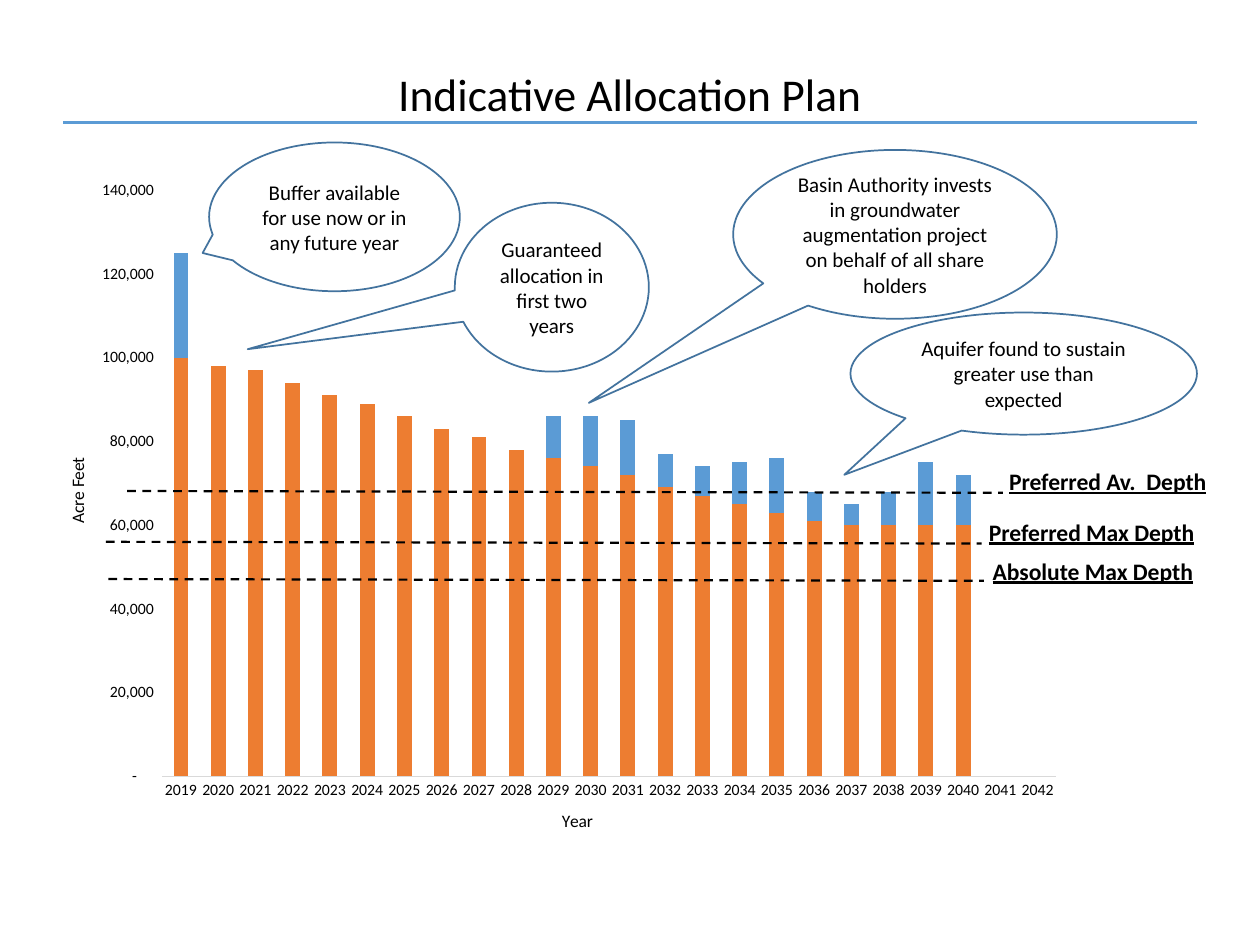
from pptx import Presentation
from pptx.chart.data import CategoryChartData
from pptx.dml.color import RGBColor
from pptx.enum.chart import XL_CHART_TYPE, XL_TICK_MARK
from pptx.enum.dml import MSO_LINE
from pptx.enum.shapes import MSO_CONNECTOR, MSO_SHAPE
from pptx.enum.text import MSO_ANCHOR, MSO_AUTO_SIZE, PP_ALIGN
from pptx.oxml import parse_xml
from pptx.oxml.ns import nsdecls, qn
from pptx.util import Pt

FONT = "Calibri"
BLACK, BLUE, ORANGE, OUTLINE, GREY = "000000", "5B9BD5", "ED7D31", "43739E", "D9D9D9"
YEARS = [str(year) for year in range(2019, 2043)]
ALLOCATION = [thousand * 1000 for thousand in (
    100, 98, 97, 94, 91, 89, 86, 83, 81, 78, 76, 74, 72, 69, 67, 65, 63, 61,
    60, 60, 60, 60)] + [None] * 2
BUFFER = [25000] + [None] * 9 + [thousand * 1000 for thousand in (
    10, 12, 13, 8, 7, 10, 13, 7, 5, 8, 15, 12)] + [None] * 2
CALLOUTS = [
    ("Guaranteed allocation in first two years",
     (259.9, 115.9, 110.9, 96.5), (-1.567, 0.367)),
    ("Basin Authority invests in groundwater augmentation project on behalf of all share holders",
     (419, 85.7, 185, 96.5), (-0.946, 0.998)),
    ("Aquifer found to sustain greater use than expected",
     (486, 178.6, 198, 69.8), (-0.518, 0.829)),
    ("Buffer available for use now or in any future year",
     (119.5, 81.4, 143.3, 85), (-0.526, 0.243)),
]
DEPTHS = [
    ("Preferred Max Depth", (60.5, 309.6), (558, 292.3, 137.5)),
    ("Absolute Max Depth", (61.9, 330.9), (560.2, 314.6, 134.6)),
    ("Preferred Av.  Depth", (72.7, 280.6), (569.5, 263.5, 133.2)),
]
DEPTH_LENGTH, DEPTH_DROP = 500.4, 1


def color(hex_code):
    """Return the colour for a hex string."""
    return RGBColor.from_string(hex_code)


def style_font(font, size, bold=False, underline=False):
    """Apply the slide's typeface in black."""
    font.name, font.size = FONT, Pt(size)
    font.bold, font.underline = bold, underline
    font.color.rgb = color(BLACK)


def write(frame, text, size=12, align=PP_ALIGN.CENTER, anchor=MSO_ANCHOR.MIDDLE,
          wrap=True, bold=False, underline=False):
    """Put one formatted paragraph in a text frame."""
    frame.word_wrap, frame.vertical_anchor = wrap, anchor
    paragraph = frame.paragraphs[0]
    paragraph.alignment = align
    run = paragraph.add_run()
    run.text = text
    style_font(run.font, size, bold, underline)


def add_title(slide, text):
    """Fill the title placeholder and rule a line beneath it."""
    title = slide.shapes.title
    title.left, title.top, title.width, title.height = Pt(36), Pt(33.8), Pt(648), Pt(38.9)
    write(title.text_frame, text, size=26)
    add_line(slide, (36, 70), (684, 70), BLUE, 2.25)


def add_line(slide, start, end, line_color, width, dash=None):
    """Draw a straight line without a shadow."""
    line = slide.shapes.add_connector(
        MSO_CONNECTOR.STRAIGHT, *(Pt(value) for value in (*start, *end)))
    line.line.color.rgb = color(line_color)
    line.line.width = Pt(width)
    if dash:
        line.line.dash_style = dash
    line._element.spPr.append(parse_xml(f"<a:effectLst {nsdecls('a')}/>"))


def add_callout(slide, text, box, tip):
    """Draw an outlined oval callout with its tip at an offset from its centre."""
    callout = slide.shapes.add_shape(
        MSO_SHAPE.OVAL_CALLOUT, *(Pt(value) for value in box))
    callout.adjustments[0], callout.adjustments[1] = tip
    callout.shadow.inherit = False
    callout.fill.background()
    callout.line.color.rgb = color(OUTLINE)
    callout.line.width = Pt(1)
    write(callout.text_frame, text)


def add_depth(slide, text, start, label_box):
    """Draw a dashed depth limit with its label."""
    left, top = start
    add_line(slide, start, (left + DEPTH_LENGTH, top + DEPTH_DROP),
             BLACK, 1.25, MSO_LINE.DASH)
    label_left, label_top, label_width = label_box
    label = slide.shapes.add_textbox(
        Pt(label_left), Pt(label_top), Pt(label_width), Pt(23.8))
    write(label.text_frame, text, size=13.5, align=PP_ALIGN.LEFT,
          anchor=MSO_ANCHOR.TOP, wrap=False, bold=True, underline=True)
    label.text_frame.auto_size = MSO_AUTO_SIZE.SHAPE_TO_FIT_TEXT


def style_axis(axis, title):
    """Title an axis and strip its ticks and gridlines."""
    write(axis.axis_title.text_frame, title, size=10)
    axis.has_major_gridlines = False
    axis.major_tick_mark = axis.minor_tick_mark = XL_TICK_MARK.NONE
    style_font(axis.tick_labels.font, 9)


def set_plot_area(chart, left, top, width, height):
    """Fix the inner plot area as fractions of the chart."""
    plot_area = chart.element.find(".//" + qn("c:plotArea"))
    for layout in plot_area.findall(qn("c:layout")):
        plot_area.remove(layout)
    plot_area.insert(0, parse_xml(
        f'<c:layout {nsdecls("c")}><c:manualLayout><c:layoutTarget val="inner"/>'
        '<c:xMode val="edge"/><c:yMode val="edge"/>'
        f'<c:x val="{left}"/><c:y val="{top}"/><c:w val="{width}"/><c:h val="{height}"/>'
        '</c:manualLayout></c:layout>'))


def add_allocation_chart(slide):
    """Add the stacked columns of yearly allocation and buffer."""
    data = CategoryChartData()
    data.categories = YEARS
    data.add_series("Series 1", ALLOCATION)
    data.add_series("Series 2", BUFFER)
    chart = slide.shapes.add_chart(
        XL_CHART_TYPE.COLUMN_STACKED, Pt(36), Pt(97.2), Pt(568), Pt(380.9), data).chart
    chart.has_legend = chart.has_title = False
    style_font(chart.font, 10)
    plot = chart.plots[0]
    plot.gap_width, plot.overlap, plot.vary_by_categories = 150, 100, False
    for series, fill in zip(plot.series, (ORANGE, BLUE)):
        series.format.fill.solid()
        series.format.fill.fore_color.rgb = color(fill)
    years, acre_feet = chart.category_axis, chart.value_axis
    style_axis(years, "Year")
    years.format.line.color.rgb = color(GREY)
    years.format.line.width = Pt(0.75)
    style_axis(acre_feet, "Acre Feet")
    acre_feet.format.line.fill.background()
    acre_feet.minimum_scale, acre_feet.maximum_scale = 0, 140000
    acre_feet.major_unit = 20000
    acre_feet.tick_labels.number_format = '_-* #,##0_-;\\-* #,##0_-;_-* "-"??_-;_-@_'
    acre_feet.tick_labels.number_format_is_linked = False
    set_plot_area(chart, 0.1, 0.03, 0.9, 0.88)


def main():
    """Build and save the allocation plan slide."""
    deck = Presentation()
    deck.slide_width, deck.slide_height = Pt(720), Pt(540)
    slide = deck.slides.add_slide(deck.slide_layouts[5])
    add_allocation_chart(slide)
    add_title(slide, "Indicative Allocation Plan")
    for text, box, tip in CALLOUTS:
        add_callout(slide, text, box, tip)
    for text, start, label_box in DEPTHS:
        add_depth(slide, text, start, label_box)
    deck.save("out.pptx")


if __name__ == "__main__":
    main()
